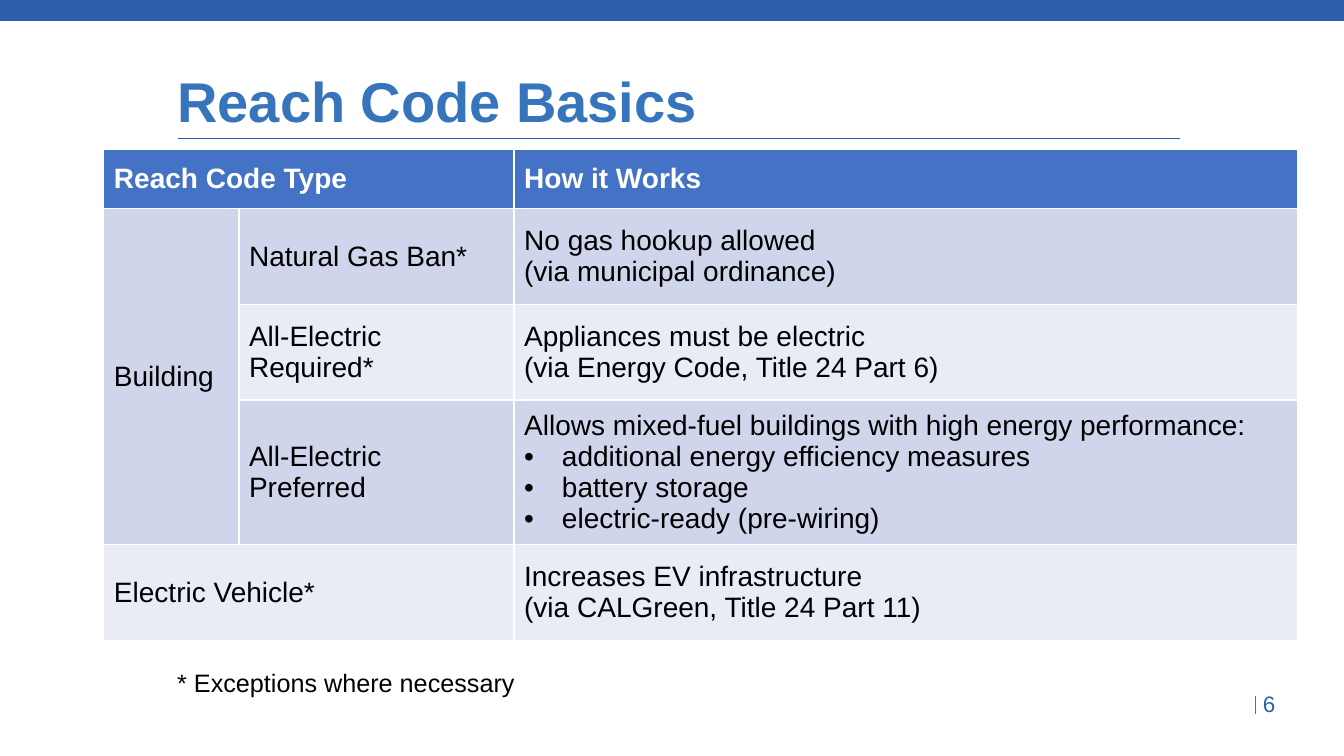
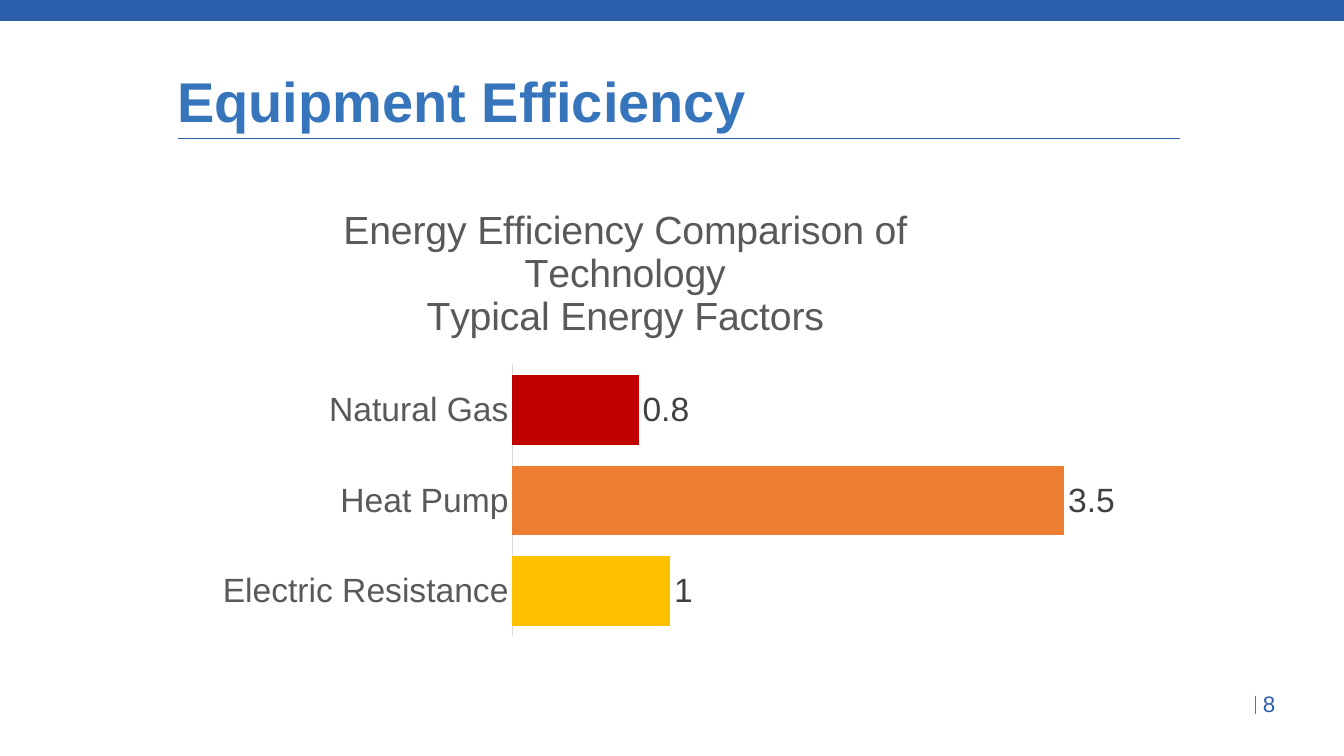
from lxml.etree import SubElement
from pptx import Presentation
from pptx.chart.data import CategoryChartData
from pptx.dml.color import RGBColor
from pptx.enum.chart import XL_CHART_TYPE, XL_LABEL_POSITION, XL_TICK_MARK
from pptx.enum.shapes import MSO_CONNECTOR, MSO_SHAPE
from pptx.enum.text import MSO_ANCHOR, PP_ALIGN
from pptx.oxml import parse_xml
from pptx.oxml.ns import nsdecls, qn
from pptx.util import Pt

NAVY, TITLE_BLUE, ACCENT = "2B5FAC", "3675BB", "4472C4"
BLACK, WHITE, GREY, DARK_GREY, PALE_GREY = "000000", "FFFFFF", "595959", "404040", "D9D9D9"
BANDS = ("CFD5EA", "E9EBF5")

TITLE = {"size": Pt(40), "bold": True, "color": TITLE_BLUE}
NUMBER = {"size": Pt(16), "color": NAVY}
NOTE = {"size": Pt(18), "color": BLACK}
HEAD = {"size": Pt(20), "bold": True, "color": WHITE}
CELL = {"size": Pt(20), "bold": False, "color": BLACK}
CHART_TITLE = {"size": Pt(28), "bold": False, "color": GREY}
AXIS = {"size": Pt(24), "color": GREY}
LABEL = {"size": Pt(24), "color": DARK_GREY}

TITLE_BOX = (119.5, 41, 723.5, 67.7)
TABLE_BOX = (74.2, 106.6)
CHART_BOX = (147.6, 143.3, 682.6, 317.5)

COLUMNS = (96.5, 196.5, 560)
ROWS = (42.3, 68.4, 68.4, 102.8, 68.4)
CODES = [
    ["Reach Code Type", "", "How it Works"],
    ["Building", "Natural Gas Ban*", "No gas hookup allowed\n(via municipal ordinance)"],
    ["", "All-Electric Required*",
     "Appliances must be electric\n(via Energy Code, Title 24 Part 6)"],
    ["", "All-Electric Preferred",
     "Allows mixed-fuel buildings with high energy performance:\n"
     "• additional energy efficiency measures\n• battery storage\n• electric-ready (pre-wiring)"],
    ["Electric Vehicle*", "",
     "Increases EV infrastructure\n(via CALGreen, Title 24 Part 11)"],
]
MERGES = [((0, 0), (0, 1)), ((1, 0), (3, 0)), ((4, 0), (4, 1))]
FACTORS = {"Natural Gas": (0.8, "C00000"), "Heat Pump": (3.5, "ED7D31"),
           "Electric Resistance": (1, "FFC000")}


def paint(fmt, color):
    """Give a fill or a line one solid colour."""
    fill = getattr(fmt, "fill", fmt)
    fill.solid()
    fill.fore_color.rgb = RGBColor.from_string(color)


def style(font, values):
    """Set font attributes from a dict of format values."""
    for name, value in {"name": "Arial", **values}.items():
        if name == "color":
            font.color.rgb = RGBColor.from_string(value)
        else:
            setattr(font, name, value)


def write(tf, text, values):
    """Write lines of text, turning a leading bullet into a real one."""
    for i, line in enumerate(text.split("\n")):
        p = tf.paragraphs[0] if i == 0 else tf.add_paragraph()
        if line.startswith("• "):
            pPr = p._p.get_or_add_pPr()
            pPr.set("marL", str(Pt(27)))
            pPr.set("indent", str(-Pt(27)))
            SubElement(pPr, qn("a:buFont")).set("typeface", "Arial")
            SubElement(pPr, qn("a:buChar")).set("char", "•")
        r = p.add_run()
        r.text = line.removeprefix("• ")
        style(r.font, values)


def add_text(slide, box, text, values, wrap=True):
    """Add a text box."""
    tf = slide.shapes.add_textbox(*map(Pt, box)).text_frame
    tf.word_wrap = wrap
    write(tf, text, values)


def add_line(slide, start, end, color):
    """Add a thin straight line without shadow."""
    line = slide.shapes.add_connector(MSO_CONNECTOR.STRAIGHT, *map(Pt, start + end))
    paint(line.line, color)
    line.line.width = Pt(0.5)
    SubElement(line.element.spPr, qn("a:effectLst"))
    return line


def set_up_layout(slide, layout):
    """Move the shared band and lines to the layout and place its title."""
    band = slide.shapes.add_shape(MSO_SHAPE.RECTANGLE, *map(Pt, (-21.6, -14.4, 996.5, 28.8)))
    band.shadow.inherit = False
    paint(band, NAVY)
    paint(band.line, NAVY)
    band.line.width = Pt(1)
    rule = add_line(slide, (127.4, 98.6), (843, 98.6), NAVY)
    tick = add_line(slide, (897, 496.8), (897, 509.8), ACCENT)
    for sp in (band, rule, tick):
        layout.shapes.element.append(sp.element)
    title = layout.placeholders[0]
    title.left, title.top, title.width, title.height = map(Pt, TITLE_BOX)


def add_slide(prs, layout, title, number):
    """Add a slide with its title and number."""
    slide = prs.slides.add_slide(layout)
    tf = slide.shapes.title.text_frame
    tf.vertical_anchor = MSO_ANCHOR.MIDDLE
    write(tf, title, TITLE)
    tf.paragraphs[0].alignment = PP_ALIGN.LEFT
    tf.paragraphs[0].line_spacing = 0.9
    add_text(slide, (895, 489.6, 34.6, 26.6), number, NUMBER, wrap=False)
    return slide


def add_code_table(slide, left, top):
    """Add the table of reach codes at a corner."""
    frame = slide.shapes.add_table(len(ROWS), len(COLUMNS), Pt(left), Pt(top),
                                   Pt(sum(COLUMNS)), Pt(sum(ROWS)))
    table = frame.table
    for column, width in zip(table.columns, COLUMNS):
        column.width = Pt(width)
    for row, height in zip(table.rows, ROWS):
        row.height = Pt(height)
    for start, end in MERGES:
        table.cell(*start).merge(table.cell(*end))
    for i, texts in enumerate(CODES):
        for j, text in enumerate(texts):
            cell = table.cell(i, j)
            paint(cell, BANDS[(i - 1) % 2] if i else ACCENT)
            cell.vertical_anchor = MSO_ANCHOR.MIDDLE
            if text:
                write(cell.text_frame, text, CELL if i else HEAD)


def set_layout(parent, index, inner=False, **fractions):
    """Place a chart part by fractions of the chart's box."""
    for old in parent.findall(qn("c:layout")):
        parent.remove(old)
    target = '<c:layoutTarget val="inner"/>' if inner else ""
    modes = "".join(f'<c:{k}Mode val="edge"/>' for k in "xy")
    sizes = "".join(f'<c:{k} val="{v}"/>' for k, v in fractions.items())
    parent.insert(index, parse_xml(
        f'<c:layout {nsdecls("c")}><c:manualLayout>{target}{modes}{sizes}'
        '</c:manualLayout></c:layout>'))


def add_factor_chart(slide, box):
    """Add the bar chart of energy factors in a box."""
    data = CategoryChartData()
    data.categories = list(FACTORS)
    data.add_series("Series 1", [value for value, _ in FACTORS.values()])
    chart = slide.shapes.add_chart(XL_CHART_TYPE.BAR_CLUSTERED, *map(Pt, box), data).chart
    style(chart.font, {"size": Pt(24), "color": BLACK})
    chart.has_legend = False
    title = chart.chart_title
    write(title.text_frame,
          "Energy Efficiency Comparison of Technology\nTypical Energy Factors", CHART_TITLE)
    title.include_in_layout = False
    set_layout(title._element, 1, x=0.14, y=0.01)

    plot = chart.plots[0]
    plot.gap_width = 30
    plot.vary_by_categories = False
    set_layout(chart._chartSpace.chart.plotArea, 0, inner=True, x=0.32, y=0.37, w=0.66, h=0.61)
    plot.has_data_labels = True
    labels = plot.data_labels
    labels.show_value = True
    labels.position = XL_LABEL_POSITION.OUTSIDE_END
    style(labels.font, LABEL)
    paint(plot.series[0].format, ACCENT)
    for i, (_, color) in enumerate(FACTORS.values()):
        paint(plot.series[0].points[i].format, color)

    axis = chart.category_axis
    axis.reverse_order = True
    axis.major_tick_mark = axis.minor_tick_mark = XL_TICK_MARK.NONE
    style(axis.tick_labels.font, AXIS)
    paint(axis.format.line, PALE_GREY)
    axis.format.line.width = Pt(0.75)
    values = chart.value_axis
    values.minimum_scale, values.maximum_scale = 0, 4
    values.has_major_gridlines = False
    values.visible = False


def main():
    """Build and save the presentation."""
    prs = Presentation()
    prs.slide_width, prs.slide_height = Pt(960), Pt(540)
    layout = prs.slide_layouts[5]

    slide = add_slide(prs, layout, "Reach Code Basics", "6")
    set_up_layout(slide, layout)
    add_text(slide, (119.5, 473, 462, 29.5), "* Exceptions where necessary", NOTE)
    add_code_table(slide, *TABLE_BOX)

    slide = add_slide(prs, layout, "Equipment Efficiency", "8")
    add_factor_chart(slide, CHART_BOX)

    prs.save("out.pptx")


if __name__ == "__main__":
    main()
